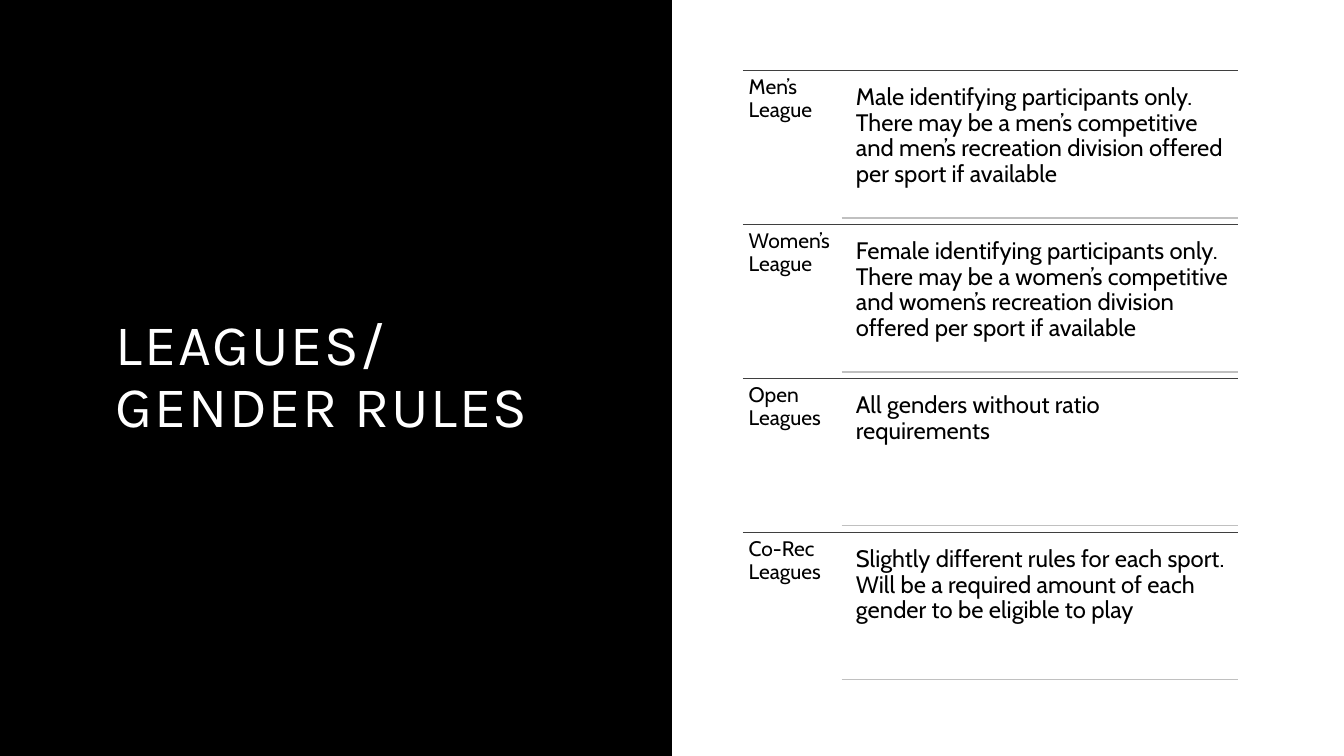
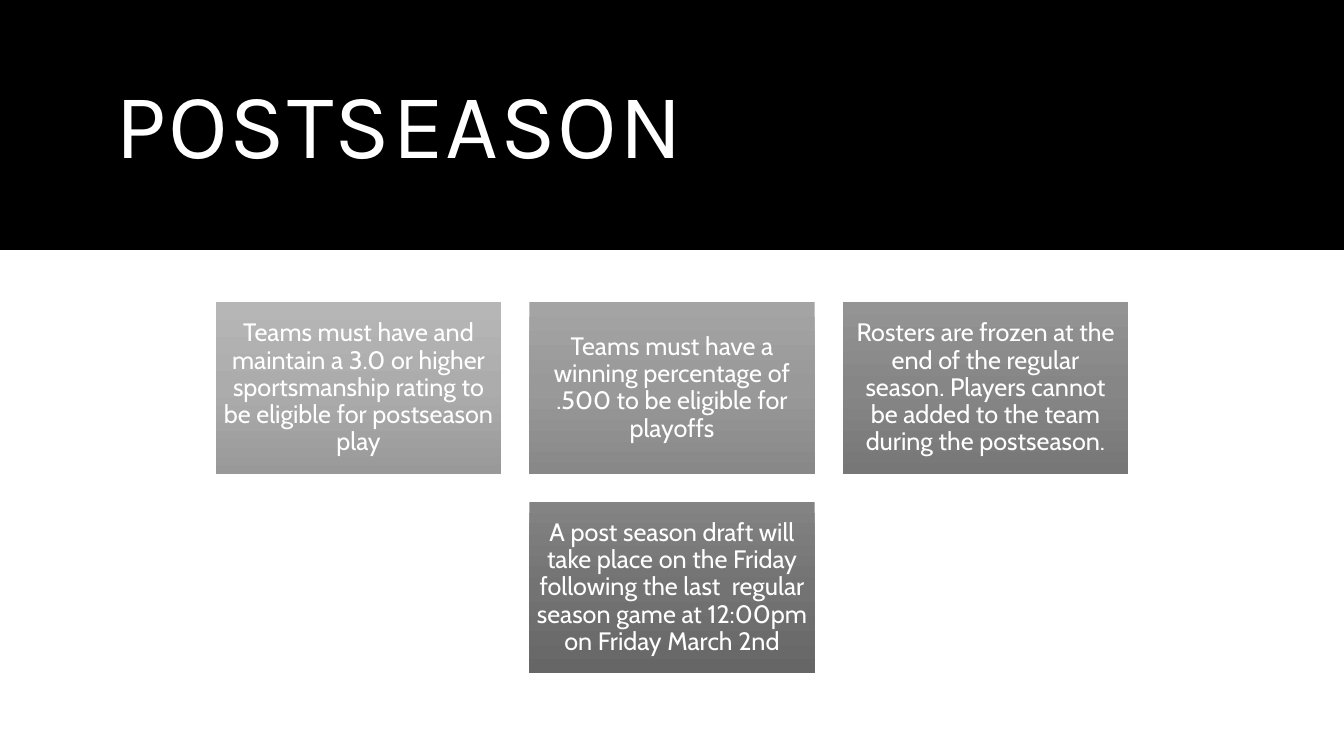
from copy import deepcopy

from lxml.etree import SubElement
from pptx import Presentation
from pptx.dml.color import RGBColor
from pptx.enum.shapes import MSO_CONNECTOR, MSO_SHAPE
from pptx.enum.text import MSO_ANCHOR, PP_ALIGN
from pptx.oxml.ns import qn
from pptx.util import Cm, Pt

COLORS = {
    "band": "000000",
    "text": "000000",
    "light": "FFFFFF",
    "strong_rule": "3F3F3F",
    "soft_rule": "C0C0C0",
}
TITLE_FONT = "Karla"
BODY_FONT = "Cabin"
SLIDE_WIDTH, SLIDE_HEIGHT = 33.87, 19.05
MARGIN = 2.67

LEAGUES = [
    ("Men’s League",
     "Male identifying participants only. There may be a men’s competitive "
     "and men’s recreation division offered per sport if available"),
    ("Women’s League",
     "Female identifying participants only. There may be a women’s competitive "
     "and women’s recreation division offered per sport if available"),
    ("Open Leagues", "All genders without ratio requirements"),
    ("Co-Rec Leagues",
     "Slightly different rules for each sport. Will be a required amount of "
     "each gender to be eligible to play"),
]

# Each row of cards: text and the gradient from top to bottom
CARD_ROWS = [
    [
        ("Teams must have and maintain a 3.0 or higher sportsmanship rating "
         "to be eligible for postseason play", ("B6B6B6", "ACACAC", "999999")),
        ("Teams must have a winning percentage of .500 to be eligible for "
         "playoffs", ("A4A4A4", "999999", "888888")),
        ("Rosters are frozen at the end of the regular season. Players cannot "
         "be added to the team during the postseason.",
         ("949494", "868686", "777777")),
    ],
    [
        ("A post season draft will take place on the Friday following the "
         "last  regular season game at 12:00pm on Friday March 2nd",
         ("838383", "737373", "666666")),
    ],
]


def rgb(name):
    return RGBColor.from_string(COLORS[name])


def write_text(shape, text, *, size, color="text", font=BODY_FONT, inset=0.18,
               align=PP_ALIGN.LEFT, anchor=MSO_ANCHOR.TOP, after=6, tracking=0):
    """Put one formatted paragraph in a shape; inset in cm, the rest in points."""
    frame = shape.text_frame
    frame.word_wrap = True
    frame.vertical_anchor = anchor
    frame.margin_left = frame.margin_right = Cm(inset)
    frame.margin_top = frame.margin_bottom = Cm(inset)
    para = frame.paragraphs[0]
    para.alignment = align
    para.line_spacing = 0.9
    para.space_after = Pt(after)
    span = para.add_run()
    span.text = text
    span.font.name = font
    span.font.size = Pt(size)
    span.font.color.rgb = rgb(color)
    if tracking:
        span.font._element.set("spc", str(round(tracking * 100)))


def add_text(page, left, top, width, height, text, **style):
    box = page.shapes.add_textbox(Cm(left), Cm(top), Cm(width), Cm(height))
    write_text(box, text, **style)


def add_rectangle(page, left, top, width, height):
    shape = page.shapes.add_shape(
        MSO_SHAPE.RECTANGLE, Cm(left), Cm(top), Cm(width), Cm(height))
    shape.shadow.inherit = False
    shape.line.fill.background()
    return shape


def add_band(page, width, height):
    """Fill the top left part of the page with the title colour."""
    band = add_rectangle(page, 0, 0, width, height)
    band.fill.solid()
    band.fill.fore_color.rgb = rgb("band")


def add_title(page, top, width, height, text, size):
    add_text(page, MARGIN, top, width, height, text, size=size, color="light",
             font=TITLE_FONT, inset=0.25, anchor=MSO_ANCHOR.MIDDLE, after=0,
             tracking=1.2)


def add_rule(page, left, right, top, color):
    rule = page.shapes.add_connector(
        MSO_CONNECTOR.STRAIGHT, Cm(left), Cm(top), Cm(right), Cm(top))
    rule.line.color.rgb = rgb(color)
    rule.line.width = Pt(1)
    SubElement(rule._element.spPr, qn("a:effectLst"))


def fill_gradient(shape, colors):
    """Run three colours evenly from top to bottom."""
    shape.fill.gradient()
    shape.fill.gradient_angle = 270
    stop_list = shape._element.spPr.find(".//" + qn("a:gsLst"))
    stop_list.insert(1, deepcopy(stop_list[0]))
    for stop, color, position in zip(shape.fill.gradient_stops, colors, (0, 0.5, 1)):
        stop.color.rgb = RGBColor.from_string(color)
        stop.position = position


def add_league(page, top, name, rule_text):
    left, detail_left, right = 18.72, 21.21, 31.19
    gap, detail_height = 0.18, 3.53
    add_rule(page, left, right, top, "strong_rule")
    add_text(page, left, top, detail_left - left, 3.88, name, size=15, inset=0.15)
    add_text(page, detail_left + gap, top + gap, right - detail_left - gap,
             detail_height, rule_text, size=17)
    add_rule(page, detail_left, right, top + gap + detail_height, "soft_rule")


def add_card(page, left, top, width, height, text, colors):
    card = add_rectangle(page, left, top, width, height)
    fill_gradient(card, colors)
    write_text(card, text, size=18, color="light", align=PP_ALIGN.CENTER,
               anchor=MSO_ANCHOR.MIDDLE)


def build_leagues(page):
    add_band(page, SLIDE_WIDTH / 2, SLIDE_HEIGHT)
    add_title(page, 1.78, 12.5, 15.47, "LEAGUES/GENDER RULES", 41)
    for index, (name, rule_text) in enumerate(LEAGUES):
        add_league(page, 1.78 + index * 3.88, name, rule_text)


def build_postseason(page):
    add_band(page, SLIDE_WIDTH, 6.3)
    add_title(page, 0.89, SLIDE_WIDTH - 2 * MARGIN, 4.72, "POSTSEASON", 66)
    width, height, gap = 7.19, 4.32, 0.71
    for row, cards in enumerate(CARD_ROWS):
        top = 7.62 + row * (height + gap)
        row_width = len(cards) * (width + gap) - gap
        first_left = (SLIDE_WIDTH - row_width) / 2
        for column, (text, colors) in enumerate(cards):
            left = first_left + column * (width + gap)
            add_card(page, left, top, width, height, text, colors)


def main():
    deck = Presentation()
    deck.slide_width, deck.slide_height = Cm(SLIDE_WIDTH), Cm(SLIDE_HEIGHT)
    blank = deck.slide_layouts[6]
    for build in (build_leagues, build_postseason):
        build(deck.slides.add_slide(blank))
    deck.save("out.pptx")


if __name__ == "__main__":
    main()
